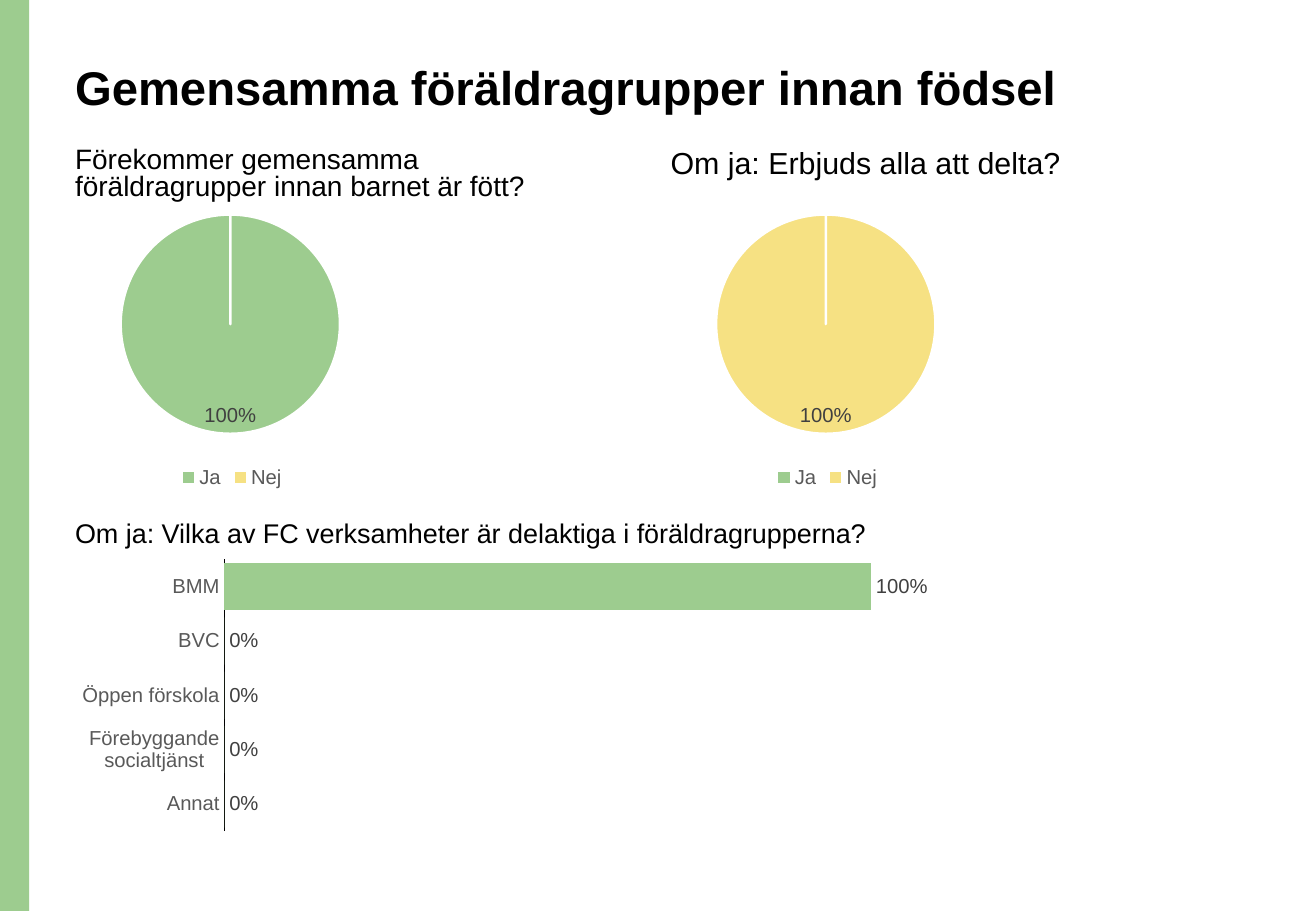
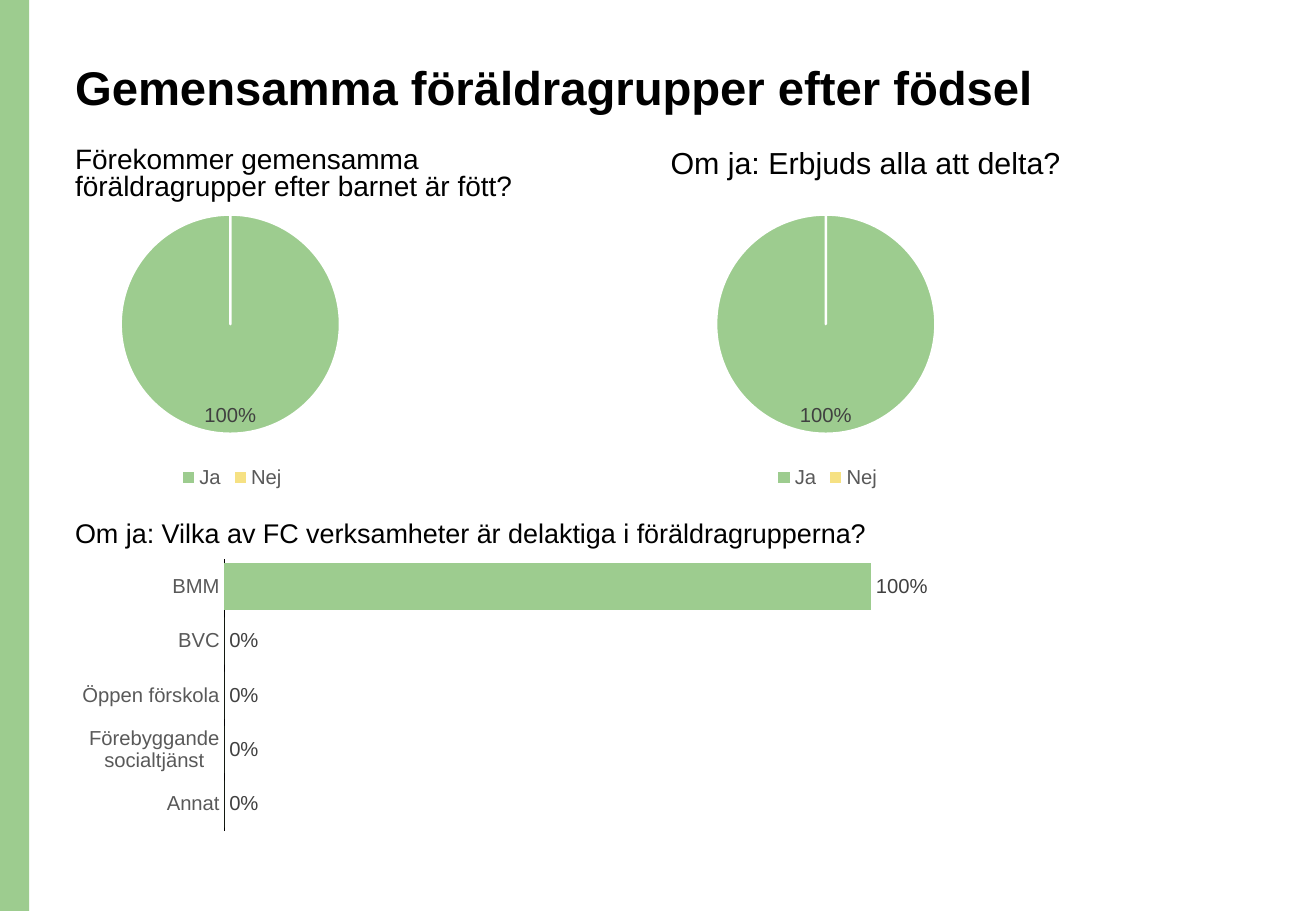
from dataclasses import dataclass

from pptx import Presentation
from pptx.chart.data import CategoryChartData
from pptx.dml.color import RGBColor
from pptx.enum.chart import XL_CHART_TYPE as ChartType
from pptx.enum.chart import XL_LABEL_POSITION as LabelPosition
from pptx.enum.chart import XL_LEGEND_POSITION as LegendPosition
from pptx.enum.chart import XL_TICK_MARK as TickMark
from pptx.enum.shapes import MSO_SHAPE as Shape
from pptx.oxml import parse_xml
from pptx.oxml.ns import nsdecls
from pptx.util import Inches, Pt


@dataclass(frozen=True)
class Theme:
    font: str = "Arial"
    green: RGBColor = RGBColor(0x9D, 0xCC, 0x8F)
    yellow: RGBColor = RGBColor(0xF6, 0xE1, 0x83)
    white: RGBColor = RGBColor(0xFF, 0xFF, 0xFF)
    black: RGBColor = RGBColor(0, 0, 0)
    axis_grey: RGBColor = RGBColor(0x59, 0x59, 0x59)
    label_grey: RGBColor = RGBColor(0x40, 0x40, 0x40)
    title_size: float = 28
    long_question_size: float = 16.6
    question_size: float = 18
    bar_question_size: float = 16
    chart_size: float = 12


THEME = Theme()
WIDTH, HEIGHT = 10.83, 7.5
BAND_WIDTH = 0.24
MARGIN, COLUMN_STEP = 0.52, 4.9
COLUMNS = [MARGIN + COLUMN_STEP * number for number in range(2)]
TITLE_ROW, QUESTION_ROW, PIE_ROW, BAR_QUESTION_ROW, BAR_ROW = 0.48, 1.17, 1.62, 4.23, 4.56

ANSWERS = ("Ja", "Nej")
ALL_YES, ALL_NO = (1, 0), (0, 1)
SERVICES = ("BMM", "BVC", "Öppen förskola", "Förebyggande socialtjänst", "Annat")
SERVICE_SHARES = (1, 0, 0, 0, 0)


def style_font(font, size, color, bold=False):
    font.name = THEME.font
    font.size = Pt(size)
    font.bold = bold
    font.color.rgb = color


def paint(fill, color):
    fill.solid()
    fill.fore_color.rgb = color


def add_band(page):
    band = page.shapes.add_shape(Shape.RECTANGLE, 0, 0, Inches(BAND_WIDTH), Inches(HEIGHT))
    band.shadow.inherit = False
    paint(band.fill, THEME.green)
    band.line.fill.background()


def add_text(page, text, left, top, width, height, size, bold=False, spacing=0.9):
    box = page.shapes.add_textbox(*map(Inches, (left, top, width, height)))
    box.text_frame.word_wrap = True
    para = box.text_frame.paragraphs[0]
    para.text = text
    para.line_spacing = spacing
    style_font(para.font, size, THEME.black, bold)


def add_chart(page, kind, categories, values, label_position, left, top, width, height):
    """Add a one-series percentage chart with value labels and no title."""
    data = CategoryChartData(number_format="0%")
    data.categories = categories
    data.add_series("Series 1", values)
    chart = page.shapes.add_chart(kind, *map(Inches, (left, top, width, height)), data).chart
    chart.has_title = False
    chart.has_legend = False
    style_font(chart.font, THEME.chart_size, THEME.axis_grey)
    plot = chart.plots[0]
    plot.has_data_labels = True
    labels = plot.data_labels
    labels.show_value = True
    labels.number_format, labels.number_format_is_linked = "0%", False
    labels.position = label_position
    style_font(labels.font, THEME.chart_size, THEME.label_grey)
    return chart


def place_plot(chart, **shares):
    """Fix the inner plot area, in shares of the chart's size."""
    parts = "".join(f'<c:{name} val="{share}"/>' for name, share in shares.items())
    layout = parse_xml(
        f'<c:layout {nsdecls("c")}><c:manualLayout><c:layoutTarget val="inner"/>'
        f'<c:xMode val="edge"/><c:yMode val="edge"/>{parts}</c:manualLayout></c:layout>'
    )
    plot_area = chart.element.chart.plotArea
    for old in plot_area.findall(layout.tag):
        plot_area.remove(old)
    plot_area.insert(0, layout)


def add_answer_pie(page, left, values):
    chart = add_chart(page, ChartType.PIE, ANSWERS, values, LabelPosition.INSIDE_END,
                      left, PIE_ROW, 2.78, 2.44)
    place_plot(chart, x=0.17, y=0.06, w=0.65, h=0.74)
    chart.has_legend = True
    chart.legend.position = LegendPosition.BOTTOM
    chart.legend.include_in_layout = False
    style_font(chart.legend.font, THEME.chart_size, THEME.axis_grey)
    plot = chart.plots[0]
    plot.vary_by_categories = True
    for number, color in enumerate((THEME.green, THEME.yellow)):
        slice_format = plot.series[0].points[number].format
        paint(slice_format.fill, color)
        slice_format.line.color.rgb = THEME.white
        slice_format.line.width = Pt(1.5)


def add_service_bars(page):
    chart = add_chart(page, ChartType.BAR_CLUSTERED, SERVICES, SERVICE_SHARES,
                      LabelPosition.OUTSIDE_END, MARGIN, BAR_ROW, 7.87, 2.33)
    plot = chart.plots[0]
    plot.vary_by_categories = False
    plot.gap_width = 15
    paint(plot.series[0].format.fill, THEME.green)
    services = chart.category_axis
    services.reverse_order = True
    services.has_major_gridlines = False
    services.major_tick_mark = services.minor_tick_mark = TickMark.NONE
    services.format.line.color.rgb = THEME.black
    services.format.line.width = Pt(0.75)
    style_font(services.tick_labels.font, THEME.chart_size, THEME.axis_grey)
    shares = chart.value_axis
    shares.minimum_scale, shares.maximum_scale = 0, 1.2
    shares.has_major_gridlines = False
    shares.visible = False


def add_survey_page(deck, moment, invited):
    """Add the page on parent groups before or after birth."""
    page = deck.slides.add_slide(deck.slide_layouts[6])
    add_band(page)
    add_text(page, f"Gemensamma föräldragrupper {moment} födsel",
             MARGIN, TITLE_ROW, 9.34, 1.02, THEME.title_size, bold=True)
    questions = (
        (f"Förekommer gemensamma föräldragrupper {moment} barnet är fött?",
         THEME.long_question_size, 0.8, ALL_YES),
        ("Om ja: Erbjuds alla att delta?", THEME.question_size, 0.9, invited),
    )
    for left, (question, size, spacing, values) in zip(COLUMNS, questions):
        add_text(page, question, left, QUESTION_ROW, 4.13, 0.57, size, spacing=spacing)
        add_answer_pie(page, left, values)
    add_service_bars(page)
    add_text(page, "Om ja: Vilka av FC verksamheter är delaktiga i föräldragrupperna?",
             MARGIN, BAR_QUESTION_ROW, 8.13, 0.63, THEME.bar_question_size)


def main():
    deck = Presentation()
    deck.slide_width, deck.slide_height = Inches(WIDTH), Inches(HEIGHT)
    add_survey_page(deck, "innan", ALL_NO)
    add_survey_page(deck, "efter", ALL_YES)
    deck.save("out.pptx")


if __name__ == "__main__":
    main()
